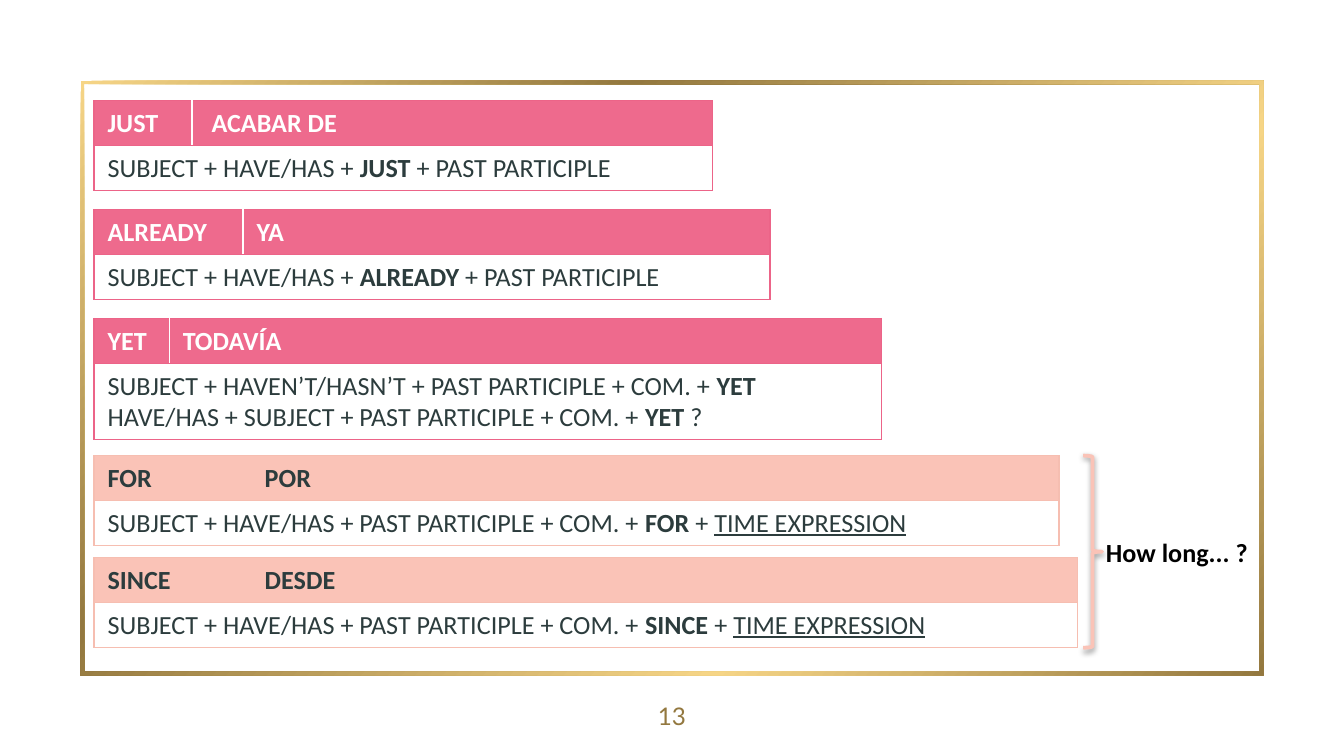
from lxml import etree
from pptx import Presentation
from pptx import util as u
from pptx.dml.color import RGBColor
from pptx.enum import shapes, text
from pptx.oxml import parse_xml
from pptx.oxml.ns import nsdecls, qn

PINK = RGBColor(0xEC, 0x64, 0x88)
HEADER_PINK = RGBColor(0xEE, 0x6A, 0x8D)
PEACH = RGBColor(0xF6, 0xBE, 0xB1)
HEADER_PEACH = RGBColor(0xFA, 0xC3, 0xB7)
GOLD = RGBColor(0x93, 0x78, 0x3F)
LIGHT_GOLD = RGBColor(0xF6, 0xD5, 0x86)
DARK = RGBColor(0x2C, 0x3C, 0x3D)
WHITE = RGBColor(0xFF, 0xFF, 0xFF)
BLACK = RGBColor(0, 0, 0)

WIDTH = 10
HEIGHT = WIDTH * 9 / 16
MARGIN = 0.6
LEFT = 0.7
ROW_HEIGHT = 0.67 / 2
SECOND_LINE = 0.23


def write_text(frame, paragraphs, size=14, font="Calibri", color=DARK,
               bold=False, align=None):
    """Fill a frame; each paragraph lists strings or (string, "b" or "u") pairs."""
    for index, runs in enumerate(paragraphs):
        paragraph = frame.paragraphs[0] if index == 0 else frame.add_paragraph()
        paragraph.alignment = align
        for item in runs:
            content, style = (item, "") if isinstance(item, str) else item
            run = paragraph.add_run()
            run.text = content
            run.font.size = u.Pt(size)
            run.font.name = font
            run.font.color.rgb = color
            run.font.bold = bold or style == "b"
            if style == "u":
                run.font.underline = True


def set_borders(cell, **edges):
    """Set edges L, R, T, B to (colour, points), or None for no line."""
    properties = cell._tc.get_or_add_tcPr()
    for side in "LRTB":
        line = etree.SubElement(properties, qn(f"a:ln{side}"))
        if edges[side] is None:
            etree.SubElement(line, qn("a:noFill"))
            continue
        color, width = edges[side]
        line.set("w", str(u.Pt(width)))
        solid = etree.SubElement(line, qn("a:solidFill"))
        etree.SubElement(solid, qn("a:srgbClr"), val=str(color))


class GrammarSlide:
    def __init__(self, presentation):
        self.slide = presentation.slides.add_slide(presentation.slide_layouts[6])

    def gold_frame(self, left, top, width, height):
        shape = self.slide.shapes.add_shape(
            shapes.MSO_SHAPE.FRAME, *map(u.Inches, (left, top, width, height)))
        shape.adjustments[0] = 0.006
        shape.shadow.inherit = False
        shape.line.fill.background()
        colors = zip((0, 31, 69, 100), (LIGHT_GOLD, GOLD) * 2)
        stops = "".join(
            f'<a:gs pos="{position * 1000}"><a:srgbClr val="{color}"/></a:gs>'
            for position, color in colors)
        gradient = parse_xml(
            f'<a:gradFill {nsdecls("a")} rotWithShape="1"><a:gsLst>{stops}</a:gsLst>'
            '<a:lin ang="2700000" scaled="0"/></a:gradFill>')
        shape._element.spPr.find(qn("a:prstGeom")).addnext(gradient)

    def label(self, left, top, width, height, content, margin=None,
              anchor=text.MSO_ANCHOR.TOP, **style):
        box = self.slide.shapes.add_textbox(
            *map(u.Inches, (left, top, width, height)))
        frame = box.text_frame
        frame.word_wrap = False
        frame.vertical_anchor = anchor
        if margin is not None:
            frame.margin_left = frame.margin_right = u.Inches(margin)
            frame.margin_top = frame.margin_bottom = u.Inches(margin)
        write_text(frame, [[content]], **style)

    def rule_table(self, top, widths, headings, body, line_color, fill_color,
                   heading_color, divider):
        """Add a two-cell heading row above one merged row with the pattern."""
        heights = (ROW_HEIGHT, ROW_HEIGHT + SECOND_LINE * (len(body) - 1))
        table = self.slide.shapes.add_table(
            2, 2, u.Inches(LEFT), u.Inches(top),
            u.Inches(sum(widths)), u.Inches(sum(heights))).table
        table.first_row = table.horz_banding = False
        for column, width in zip(table.columns, widths):
            column.width = u.Inches(width)
        for row, height in zip(table.rows, heights):
            row.height = u.Inches(height)
        outer = (line_color, 0.75)
        for row_index, inner in enumerate((divider, outer)):
            for column_index in range(2):
                cell = table.cell(row_index, column_index)
                set_borders(cell, T=outer, B=outer,
                            L=inner if column_index else outer,
                            R=outer if column_index else inner)
                if row_index:
                    cell.fill.background()
                else:
                    cell.fill.solid()
                    cell.fill.fore_color.rgb = fill_color
                    write_text(cell.text_frame, [[headings[column_index]]],
                               color=heading_color, bold=True)
        pattern = table.cell(1, 0)
        pattern.merge(table.cell(1, 1))
        write_text(pattern.text_frame, body)

    def brace(self, left, top, width, height):
        shape = self.slide.shapes.add_shape(
            shapes.MSO_SHAPE.RIGHT_BRACE, *map(u.Inches, (left, top, width, height)))
        shape.fill.background()
        shape.line.color.rgb = HEADER_PEACH
        shape.line.width = u.Pt(2)
        shape._element.spPr.append(parse_xml(
            f'<a:effectLst {nsdecls("a")}><a:outerShdw blurRad="{u.Pt(3.1)}" '
            f'dist="{u.Pt(1.6)}" dir="5400000" rotWithShape="0">'
            f'<a:srgbClr val="{BLACK}"><a:alpha val="38000"/></a:srgbClr>'
            '</a:outerShdw></a:effectLst>'))


def main():
    presentation = Presentation()
    presentation.slide_width = u.Inches(WIDTH)
    presentation.slide_height = u.Inches(HEIGHT)
    page = GrammarSlide(presentation)
    page.gold_frame(MARGIN, MARGIN, WIDTH - 2 * MARGIN, HEIGHT - 2 * MARGIN)
    page.label((WIDTH - MARGIN) / 2, HEIGHT - MARGIN, MARGIN, MARGIN, "13",
               margin=0, size=13, font="Lato", color=GOLD,
               anchor=text.MSO_ANCHOR.MIDDLE, align=text.PP_ALIGN.CENTER)

    pink = dict(line_color=PINK, fill_color=HEADER_PINK,
                heading_color=WHITE, divider=(WHITE, 1))
    peach = dict(line_color=PEACH, fill_color=HEADER_PEACH,
                 heading_color=DARK, divider=None)

    for top, widths, word, meaning in (
            (0.75, (0.73, 3.87), "JUST", " ACABAR DE"),
            (1.56, (1.11, 3.92), "ALREADY", "YA")):
        body = [["SUBJECT + HAVE/HAS + ", (word, "b"), " + PAST PARTICIPLE"]]
        page.rule_table(top, widths, (word, meaning), body, **pink)

    page.rule_table(2.37, (0.56, 5.3), ("YET", "TODAVÍA"), [
        ["SUBJECT + HAVEN’T/HASN’T + PAST PARTICIPLE + COM. + ", ("YET", "b")],
        ["HAVE/HAS + SUBJECT + PAST PARTICIPLE + COM. + ", ("YET ", "b"), "?"],
    ], **pink)

    for top, widths, word, meaning in (
            (3.39, (1.17, 6.01), "FOR", "POR"),
            (4.15, (1.17, 6.15), "SINCE", "DESDE")):
        body = [["SUBJECT + HAVE/HAS + PAST PARTICIPLE + COM. + ", (word, "b"),
                 " + ", ("TIME EXPRESSION", "u")]]
        page.rule_table(top, widths, (word, meaning), body, **peach)

    page.brace(8.06, 3.39, 0.14, 1.43)
    page.label(8.13, 3.94, 1.3, 0.34, "How long... ?", color=BLACK, bold=True)
    presentation.save("out.pptx")


if __name__ == "__main__":
    main()
